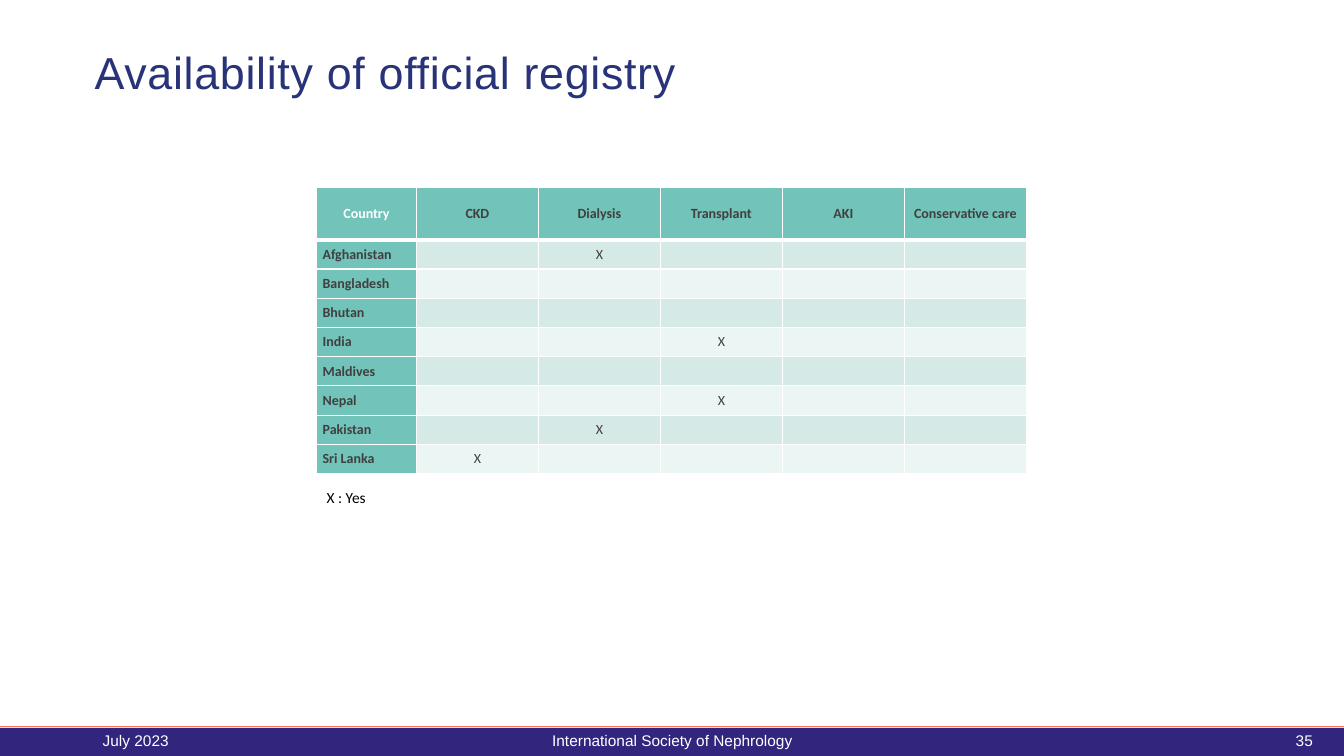
from dataclasses import dataclass

from lxml import etree
from pptx import Presentation, util as u
from pptx.dml.color import RGBColor
from pptx.enum import shapes, text
from pptx.oxml.ns import qn

HEADS = ["Country", "CKD", "Dialysis", "Transplant", "AKI", "Conservative care"]
MARKS = {
    "Afghanistan": ["Dialysis"],
    "Bangladesh": [],
    "Bhutan": [],
    "India": ["Transplant"],
    "Maldives": [],
    "Nepal": ["Transplant"],
    "Pakistan": ["Dialysis"],
    "Sri Lanka": ["CKD"],
}
LEFT, MID, RIGHT = text.PP_ALIGN.LEFT, text.PP_ALIGN.CENTER, text.PP_ALIGN.RIGHT
TITLE = "Availability of official registry"
KEY = "X : Yes"
FOOT = [  # words, left, width, align
    ("July 2023", 0.92, 3, LEFT),
    ("International Society of Nephrology", 4.42, 4.5, MID),
    ("35", 9.42, 3.7, RIGHT),
]


@dataclass(frozen=True)
class Theme:
    navy: str = "32257E"
    coral: str = "FE7055"
    ink: str = "283378"
    teal: str = "72C3B9"
    bands: tuple = ("D5E9E6", "EBF5F3")
    gray: str = "404040"
    black: str = "000000"
    white: str = "FFFFFF"
    sans: str = "Arial"
    grid: str = "Calibri"
    title: int = 32
    small: int = 11
    cell: int = 10


T = Theme()
WIDE, HIGH = 13.33, 7.5
BAR = 0.28
GRID_X, GRID_Y = 3.14, 1.86
COLS = [0.99] + [1.21] * 5
ROWS = [0.52] + [0.29] * len(MARKS)


def rgb(code):
    return RGBColor.from_string(code)


def style(para, face, size, color, bold=False, align=LEFT):
    para.alignment = align
    for run in para.runs:
        font = run.font
        font.name, font.size, font.bold = face, u.Pt(size), bold
        font.color.rgb = rgb(color)


def label(slide, words, box, face, size, color, align=LEFT, anchor=text.MSO_ANCHOR.MIDDLE):
    frame = slide.shapes.add_textbox(*map(u.Inches, box)).text_frame
    frame.word_wrap = True
    frame.vertical_anchor = anchor
    frame.text = words
    style(frame.paragraphs[0], face, size, color, align=align)
    return frame.paragraphs[0]


def edge(cell, side, width):
    """Draw one white border of a cell."""
    line = etree.SubElement(cell._tc.get_or_add_tcPr(), qn("a:ln" + side), w=str(u.Pt(width)))
    fill = etree.SubElement(line, qn("a:solidFill"))
    etree.SubElement(fill, qn("a:srgbClr"), val=T.white)


def fill_cell(cell, words, row, col):
    head, lead = row == 0, col == 0
    cell.margin_left = cell.margin_right = u.Inches(0.06)
    cell.margin_top = cell.margin_bottom = 0
    cell.vertical_anchor = text.MSO_ANCHOR.MIDDLE
    for side in "LRTB":
        thick = (head and side == "B") or (row == 1 and side == "T")
        edge(cell, side, 3 if thick else 1)
    cell.fill.solid()
    cell.fill.fore_color.rgb = rgb(T.teal if head or lead else T.bands[(row - 1) % 2])
    cell.text = words
    para = cell.text_frame.paragraphs[0]
    style(para, T.grid, T.cell, T.white if head and lead else T.gray,
          bold=head or lead, align=LEFT if lead and not head else MID)
    if not words:
        # An empty cell takes its line height from the end mark
        etree.SubElement(para._p, qn("a:endParaRPr"), sz=str(T.cell * 100))


def registry(slide):
    box = map(u.Inches, (GRID_X, GRID_Y, sum(COLS), sum(ROWS)))
    table = slide.shapes.add_table(len(ROWS), len(COLS), *box).table
    for col, width in zip(table.columns, COLS):
        col.width = u.Inches(width)
    for row, height in zip(table.rows, ROWS):
        row.height = u.Inches(height)
    lines = [HEADS] + [
        [name] + ["X" if head in marks else "" for head in HEADS[1:]]
        for name, marks in MARKS.items()
    ]
    for r, line in enumerate(lines):
        for c, words in enumerate(line):
            fill_cell(table.cell(r, c), words, r, c)


def footer(slide):
    top = HIGH - BAR
    bar = slide.shapes.add_shape(
        shapes.MSO_SHAPE.RECTANGLE, *map(u.Inches, (0, top, WIDE, BAR)))
    bar.shadow.inherit = False
    bar.fill.solid()
    bar.fill.fore_color.rgb = rgb(T.navy)
    bar.line.fill.background()
    y = top - 0.01
    rule = slide.shapes.add_connector(
        shapes.MSO_CONNECTOR.STRAIGHT, *map(u.Inches, (0, y, WIDE, y)))
    rule.line.color.rgb = rgb(T.coral)
    rule.line.width = u.Pt(0.75)
    etree.SubElement(rule._element.spPr, qn("a:effectLst"))
    for words, left, width, align in FOOT:
        label(slide, words, (left, 7.15, width, 0.4), T.sans, T.small, T.white, align)


def main():
    deck = Presentation()
    deck.slide_width, deck.slide_height = u.Inches(WIDE), u.Inches(HIGH)
    slide = deck.slides.add_slide(deck.slide_layouts[6])
    footer(slide)
    registry(slide)
    label(slide, KEY, (GRID_X, 4.79, 0.75, 0.29), T.grid, T.small, T.black,
          anchor=text.MSO_ANCHOR.TOP)
    title = label(slide, TITLE, (0.84, 0.39, 9.26, 0.71), T.sans, T.title, T.ink)
    title.line_spacing = 0.9
    title.runs[0].font._element.set("spc", "50")
    deck.save("out.pptx")


if __name__ == "__main__":
    main()
